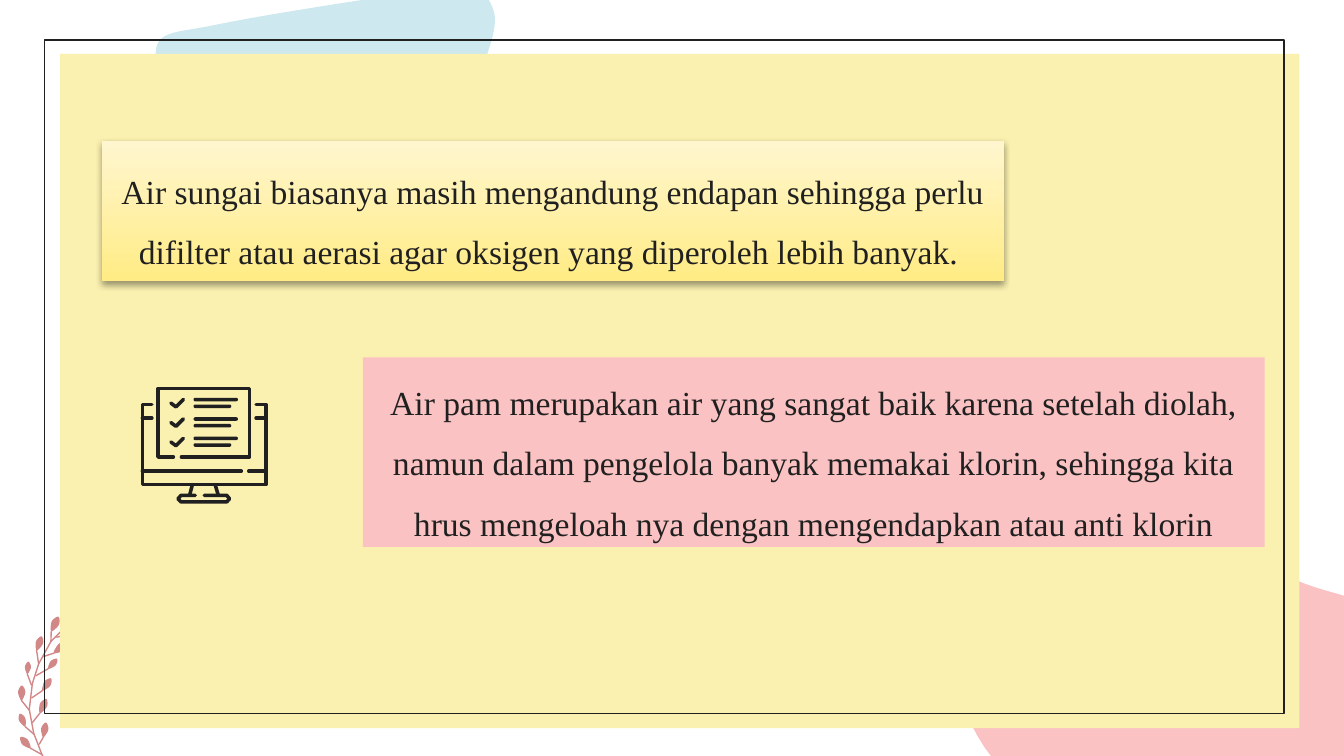
import math
import pptx
import pptx.dml.color
import pptx.enum.shapes
import pptx.enum.text
import pptx.oxml
import pptx.oxml.ns
import pptx.util

Pt = pptx.util.Pt
RECTANGLE = pptx.enum.shapes.MSO_SHAPE.RECTANGLE
ROUNDED = pptx.enum.shapes.MSO_SHAPE.ROUNDED_RECTANGLE

COLORS = {"blue": "CDE8EE", "rose": "D38888", "pink": "FAC2C2", "yellow": "FAF0AF",
          "ink": "202020", "light": "FFF6CF", "gold": "FFEC85"}
FONT = {"name": "Times New Roman", "size": Pt(18)}
FRAME = {"word_wrap": True, "vertical_anchor": pptx.enum.text.MSO_ANCHOR.MIDDLE,
         "margin_left": Pt(7.2), "margin_right": Pt(7.2),
         "margin_top": Pt(7.2), "margin_bottom": Pt(7.2)}
PARAGRAPH = {"alignment": pptx.enum.text.PP_ALIGN.CENTER, "line_spacing": 1.5}

RIVER = ("Air sungai biasanya masih mengandung endapan sehingga perlu "
         "difilter atau aerasi agar oksigen yang diperoleh lebih banyak. ",
         (54.7, 75.6, 483.1, 74.9))
TAP = ("Air pam merupakan air yang sangat baik karena setelah diolah, "
       "namun dalam pengelola banyak memakai klorin, sehingga kita "
       "hrus mengeloah nya dengan mengendapkan atau anti klorin",
       (194.4, 191.5, 483.1, 101.5))

BLUE_BLOB = [(248, -8), (236, -6.5), (153, 6.5), (112, 14), (89, 19), (83.5, 28), (87, 38),
             (106, 52), (117, 53), (144, 50), (202, 45), (222, 46), (232, 46),
             (254, 41), (262, 26), (265, 8), (257, -6.5)]
PINK_BLOB = [(763, 318), (752, 215), (744.5, 191.5), (728, 176), (703, 171), (673, 184),
             (652, 212), (637, 256), (619, 281.5), (582, 286.5), (542, 311), (515.5, 366.5),
             (514, 384), (526, 427), (551, 447), (591, 453), (678, 443), (739, 412.5),
             (761, 356)]

STEM = [(40.3, 339.8), (33.1, 344.2), (23.8, 354.2), (18, 363.6), (13, 376.6),
        (12.2, 389.5), (13.7, 401.8), (16.6, 410.4)]
LEAVES = [
    ((33.1, 344.2), (34.6, 339), (40, 332.6)), ((23.8, 354.2), (24.5, 347), (28.8, 340.6)),
    ((17.3, 364.3), (16.6, 358), (18.7, 352)), ((13, 377.3), (10.1, 371), (12.2, 363.6)),
    ((12.2, 390.2), (8.6, 385), (7.6, 378)), ((13.7, 401.8), (8.6, 397), (5, 390.2)),
    ((13.7, 396), (16.6, 393), (19.8, 386)), ((13, 383.8), (18, 380), (23, 373.7)),
    ((15.8, 371), (22.3, 368.6), (28.1, 363.6)), ((20.9, 360), (28.1, 358), (33.8, 354.2)),
    ((27.4, 351), (33.1, 350.6), (41, 347)), ((36.7, 342.7), (41.8, 342.7), (50.4, 341.3))]

MONITOR = [
    [(81.4, 216.7), (76.3, 216.7), (76.3, 259.6), (142.4, 259.6), (142.4, 216.7), (137.2, 216.7)],
    [(76.3, 224), (81.4, 224)], [(137.2, 224), (142.4, 224)],
    [(76.3, 252.4), (129.3, 252.4)], [(133.3, 252.4), (142.4, 252.4)],
    [(103.1, 259.6), (101.6, 265.4)], [(115.3, 259.6), (117, 265.4)],
    [(104.6, 265.4), (97, 265.4), (95.4, 267.2), (97, 268.9), (121.5, 268.9),
     (123, 267.2), (121.5, 265.4), (109.5, 265.4)]]
SHEET = [(92.9, 244.8), (84.6, 244.8), (84.6, 208.1), (133.6, 208.1), (133.6, 244.8), (97.2, 244.8)]
CHECK = [(91.6, 216), (94.3, 218), (98.3, 214)]
BARS = [(213.1, 23.8), (216.7, 20.2)]
ROW_COUNT, ROW_PITCH = 3, 10.4


def set_values(target, values):
    for name, value in values.items():
        setattr(target, name, value)


def rgb(name):
    return pptx.dml.color.RGBColor.from_string(COLORS[name])


def paint(shape, fill=None, line=None, width=0.75):
    shape.shadow.inherit = False
    if fill:
        shape.fill.solid()
        shape.fill.fore_color.rgb = rgb(fill)
    else:
        shape.fill.background()
    if line:
        shape.line.color.rgb = rgb(line)
        shape.line.width = Pt(width)
        shape.element.spPr.find(pptx.oxml.ns.qn("a:ln")).set("cap", "rnd")
    else:
        shape.line.fill.background()
    return shape


def add_box(shapes, kind, box, **style):
    return paint(shapes.add_shape(kind, *map(Pt, box)), **style)


def add_outline(shapes, contours, closed, **style):
    contours = [[(Pt(x), Pt(y)) for x, y in contour] for contour in contours]
    builder = shapes.build_freeform(*contours[0][0])
    for index, contour in enumerate(contours):
        if index:
            builder.move_to(*contour[0])
        builder.add_line_segments(contour[1:], close=closed)
    return paint(builder.convert_to_shape(), **style)


def smooth_loop(points, steps=8):
    loop = []
    for index in range(len(points)):
        a, b, c, d = (points[(index + shift) % len(points)] for shift in (-1, 0, 1, 2))
        for step in range(steps):
            t = step / steps
            loop.append(tuple(
                b[k] + t / 2 * (c[k] - a[k] + t * (2 * a[k] - 5 * b[k] + 4 * c[k] - d[k]
                                + t * (3 * b[k] - a[k] - 3 * c[k] + d[k]))) for k in (0, 1)))
    return loop


def lean(point, angle=math.radians(14.1), center=(27.7, 371.5), shift=1):
    x, y = point[0] - center[0], point[1] - center[1]
    return (center[0] + shift + x * math.cos(angle) + y * math.sin(angle),
            center[1] - x * math.sin(angle) + y * math.cos(angle))


def leaf_outline(base, tip):
    dx, dy = tip[0] - base[0], tip[1] - base[1]
    sides = [(0, 0), (0.3, 0.18), (0.65, 0.25), (1, 0.08), (1, -0.08), (0.65, -0.25), (0.3, -0.18)]
    return smooth_loop([(base[0] + dx * u - dy * v, base[1] + dy * u + dx * v) for u, v in sides], 4)


def add_sprig(shapes):
    leaves = [tuple(map(lean, leaf)) for leaf in LEAVES]
    twigs = [list(map(lean, STEM))] + [[joint, base] for joint, base, tip in leaves]
    add_outline(shapes, twigs, False, line="rose", width=0.75)
    add_outline(shapes, [leaf_outline(base, tip) for joint, base, tip in leaves], True, fill="rose")


def add_icon(shapes):
    icon = shapes.add_group_shape().shapes
    for contours in (MONITOR, [SHEET]):
        add_outline(icon, contours, False, line="ink", width=1.9)
    for row in range(ROW_COUNT):
        drop = row * ROW_PITCH
        add_outline(icon, [[(x, y + drop) for x, y in CHECK]], False, line="ink", width=1.9)
        for top, width in BARS:
            bar = add_box(icon, ROUNDED, (103.7, top + drop, width, 1.9), fill="ink")
            bar.adjustments[0] = 0.5


def add_message(shapes, message, fill):
    text, box = message
    shape = add_box(shapes, RECTANGLE, box, fill=fill)
    set_values(shape.text_frame, FRAME)
    paragraph = shape.text_frame.paragraphs[0]
    set_values(paragraph, PARAGRAPH)
    run = paragraph.add_run()
    run.text = text
    set_values(run.font, FONT)
    run.font.color.rgb = rgb("ink")
    return shape


def add_gradient_and_shadow(shape):
    shape.fill.gradient()
    shape.fill.gradient_angle = 270
    for stop, name, position in zip(shape.fill.gradient_stops, ("light", "gold"), (0, 1)):
        stop.color.rgb = rgb(name)
        stop.position = position
    effects = shape.element.spPr.find(pptx.oxml.ns.qn("a:effectLst"))
    effects.append(pptx.oxml.parse_xml(
        f'<a:outerShdw {pptx.oxml.ns.nsdecls("a")} blurRad="40000" dist="23000" dir="5400000" '
        'rotWithShape="0"><a:srgbClr val="000000"><a:alpha val="38000"/></a:srgbClr></a:outerShdw>'))


def main():
    presentation = pptx.Presentation()
    set_values(presentation, {"slide_width": Pt(720), "slide_height": Pt(405)})
    shapes = presentation.slides.add_slide(presentation.slide_layouts[6]).shapes
    add_outline(shapes, [smooth_loop(BLUE_BLOB)], True, fill="blue")
    add_sprig(shapes)
    add_outline(shapes, [smooth_loop(PINK_BLOB)], True, fill="pink").rotation = 90
    add_box(shapes, RECTANGLE, (32.2, 28.9, 664, 361.2), fill="yellow")
    add_box(shapes, RECTANGLE, (23.9, 21.4, 664, 360.7), line="ink")
    add_gradient_and_shadow(add_message(shapes, RIVER, "light"))
    add_message(shapes, TAP, "pink")
    add_icon(shapes)
    presentation.save("out.pptx")


if __name__ == "__main__":
    main()
